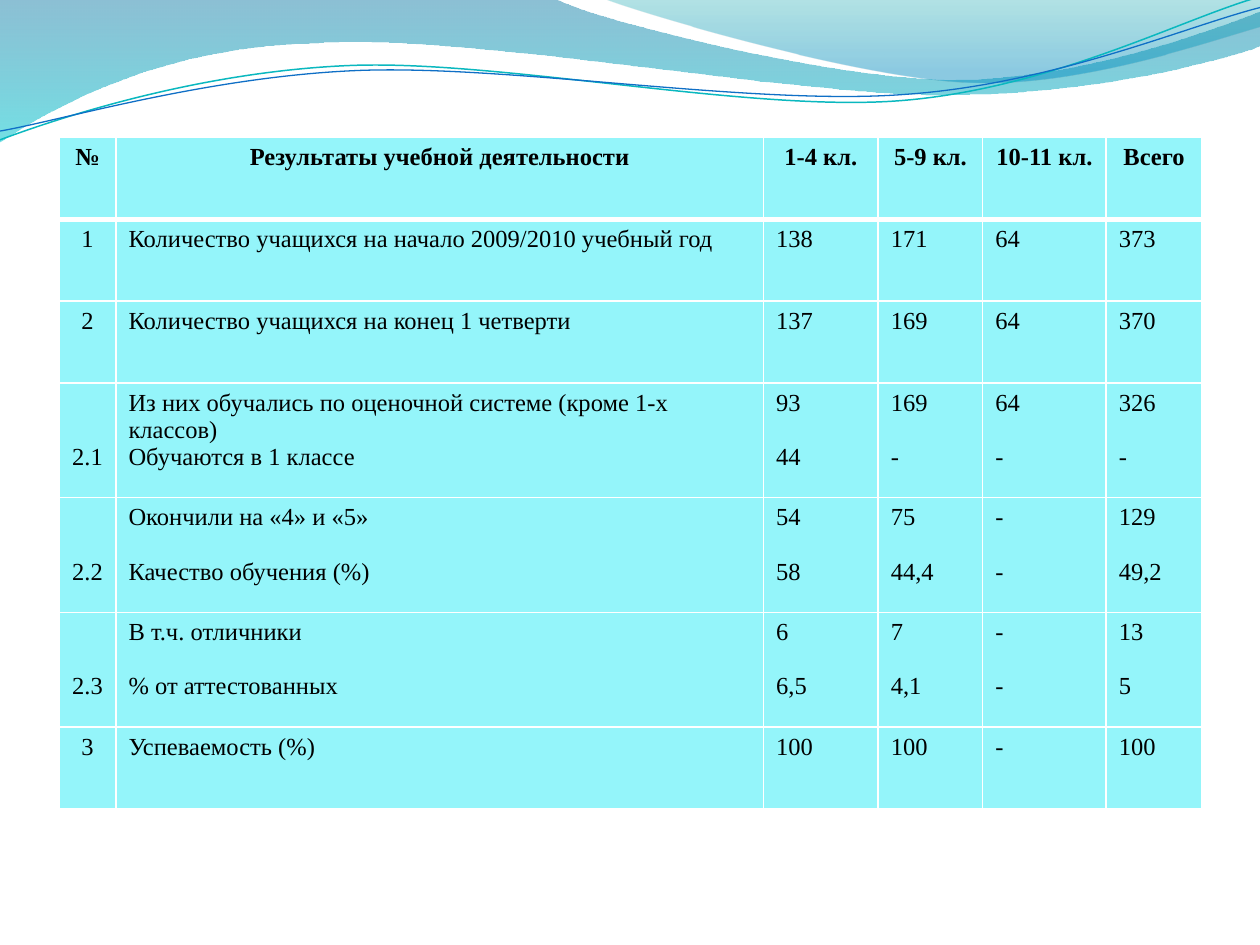
import math
from typing import NamedTuple

from lxml import etree
from pptx import Presentation
from pptx.dml.color import RGBColor
from pptx.enum.text import PP_ALIGN
from pptx.oxml.ns import qn
from pptx.util import Inches, Pt

CENTER, LEFT = PP_ALIGN.CENTER, PP_ALIGN.LEFT
BLACK = RGBColor(0x00, 0x00, 0x00)
WHITE = RGBColor(0xFF, 0xFF, 0xFF)
CELL_FILL = RGBColor(0x94, 0xF5, 0xFA)
DEEP_BLUE = RGBColor(0x00, 0x74, 0xA1)
CYAN = RGBColor(0x00, 0xC6, 0xCF)
TEAL = RGBColor(0x00, 0xA1, 0xA9)
SKY = RGBColor(0x00, 0x8B, 0xBF)
LINE_TEAL = RGBColor(0x0A, 0xB8, 0xBF)
LINE_BLUE = RGBColor(0x0F, 0x6F, 0xC6)
FONT = "Times New Roman"
FONT_SIZE = Pt(14)
BLANK_LINE = Pt(15.5)
WAVE_TILT = -2.7
WAVE_CENTER = (4.99, 0.58)


class Stop(NamedTuple):
    position: float
    color: RGBColor
    opacity: int


class Band(NamedTuple):
    """Filled shape: a segment of 1 point is a line, of 3 a Bezier curve."""
    start: tuple
    segments: list
    stops: tuple


class Wave(NamedTuple):
    start: tuple
    segments: list
    color: RGBColor
    width: float


class Row(NamedTuple):
    height: float
    cells: tuple
    label_gap: bool = True


BANDS = [
    Band((0, 0), [
        [(4.4, -0.01)],
        [(4.76, 0.17), (6.64, 0.63), (7.58, 0.63)],
        [(8.53, 0.63), (9.58, 0.26), (10, 0.09)],
        [(10.01, 0.36)],
        [(9.83, 0.44), (8.7, 0.76), (7.46, 0.75)],
        [(6.22, 0.75), (3.82, 0.28), (2.57, 0.34)],
        [(1.29, 0.36), (0.46, 0.83), (-0.01, 1.13)],
    ], (Stop(0, DEEP_BLUE, 45), Stop(1, CYAN, 55))),
    Band((4.79, -0.01), [
        [(5.09, 0.11), (6.82, 0.62), (7.69, 0.65)],
        [(8.56, 0.69), (9.61, 0.32), (10, 0.21)],
        [(10, 0)],
    ], (Stop(0, TEAL, 30), Stop(0.8, SKY, 45))),
]
WAVES = [
    Wave((0, 1.11), [
        [(0.48, 0.93), (1.58, 0.57), (2.77, 0.52)],
        [(3.95, 0.47), (5.93, 0.89), (7.13, 0.8)],
        [(8.33, 0.71), (9.38, 0.15), (9.98, -0.02)],
    ], LINE_TEAL, 0.85),
    Wave((0, 1.04), [
        [(0.47, 0.96), (1.64, 0.61), (2.83, 0.56)],
        [(4.03, 0.51), (5.97, 0.84), (7.17, 0.75)],
        [(8.36, 0.67), (9.41, 0.21), (10, 0.06)],
    ], LINE_BLUE, 0.75),
]

COL_WIDTHS = [0.45, 5.14, 0.91, 0.83, 0.98, 0.76]
SHORT, TALL = 0.65, 0.91
ROWS = [
    Row(SHORT, ("№", "Результаты учебной деятельности", "1-4 кл.", "5-9 кл.",
                "10-11 кл.", "Всего")),
    Row(SHORT, ("1", "Количество учащихся на начало 2009/2010 учебный год",
                "138", "171", "64", "373")),
    Row(SHORT, ("2", "Количество учащихся на конец 1 четверти",
                "137", "169", "64", "370")),
    Row(TALL, ("2.1", "Из них обучались по оценочной системе (кроме 1-х классов)\n"
               "Обучаются в 1 классе",
               "93\n44", "169\n-", "64\n-", "326\n-"), label_gap=False),
    Row(TALL, ("2.2", "Окончили на «4» и «5»\nКачество обучения (%)",
               "54\n58", "75\n44,4", "-\n-", "129\n49,2")),
    Row(TALL, ("2.3", "В т.ч. отличники\n% от аттестованных",
               "6\n6,5", "7\n4,1", "-\n-", "13\n5")),
    Row(SHORT, ("3", "Успеваемость (%)", "100", "100", "-", "100")),
]


def add_outline(slide, start: tuple, segments: list, close: bool):
    """Build the outline through all points, then bend 3-point segments."""
    x, y = start
    builder = slide.shapes.build_freeform(Inches(x), Inches(y))
    builder.add_line_segments(
        [(Inches(x), Inches(y)) for seg in segments for x, y in seg], close=close)
    sp = builder.convert_to_shape()
    sp.shadow.inherit = False
    lines = iter(list(sp._element.iter(qn("a:lnTo"))))
    for seg in segments:
        parts = [next(lines) for _ in seg]
        if len(parts) == 3:
            parts[0].addprevious(curve := etree.Element(qn("a:cubicBezTo")))
            for part in parts:
                curve.append(part[0])
                part.getparent().remove(part)
    return sp


def add_band(slide, band: Band) -> None:
    sp = add_outline(slide, band.start, band.segments, True)
    sp.line.fill.background()
    sp.fill.gradient()
    sp.fill.gradient_angle = 270
    for target, stop in zip(sp.fill.gradient_stops, band.stops):
        target.position = stop.position
        target.color.rgb = stop.color
    colors = sp._element.spPr.find(qn("a:gradFill")).iter(qn("a:srgbClr"))
    for clr, stop in zip(colors, band.stops):
        etree.SubElement(clr, qn("a:alpha"), val=str(stop.opacity * 1000))


def level(point: tuple) -> tuple:
    """Place of a wave point before the wave is tilted."""
    cx, cy = WAVE_CENTER
    dx, dy = point[0] - cx, point[1] - cy
    cos, sin = math.cos(math.radians(-WAVE_TILT)), math.sin(math.radians(-WAVE_TILT))
    return cx + dx * cos - dy * sin, cy + dx * sin + dy * cos


def add_wave(slide, wave: Wave) -> None:
    segments = [[level(point) for point in seg] for seg in wave.segments]
    sp = add_outline(slide, level(wave.start), segments, False)
    sp.rotation = WAVE_TILT
    sp.fill.background()
    sp.line.color.rgb = wave.color
    sp.line.width = Pt(wave.width)


def set_borders(cell, top: float, bottom: float) -> None:
    tc_pr = cell._tc.get_or_add_tcPr()
    for side, width in (("L", 1), ("R", 1), ("T", top), ("B", bottom)):
        ln = etree.SubElement(tc_pr, qn(f"a:ln{side}"), w=str(Pt(width)))
        fill = etree.SubElement(ln, qn("a:solidFill"))
        etree.SubElement(fill, qn("a:srgbClr"), val=str(WHITE))


def fill_cell(cell, text: str, gap: bool, bold: bool, centered: bool) -> None:
    cell.fill.solid()
    cell.fill.fore_color.rgb = CELL_FILL
    tf = cell.text_frame
    tf.text = text
    for i, p in enumerate(tf.paragraphs):
        p.alignment = CENTER if centered else LEFT
        if i and gap:
            p.space_before = BLANK_LINE
        for r in p.runs:
            r.font.name = FONT
            r.font.size = FONT_SIZE
            r.font.bold = bold
            r.font.color.rgb = BLACK


def add_results_table(slide, rows: list) -> None:
    table = slide.shapes.add_table(
        len(rows), len(COL_WIDTHS), Inches(0.47), Inches(1.09),
        Inches(sum(COL_WIDTHS)), Inches(sum(row.height for row in rows))).table
    table.horz_banding = False
    for column, width in zip(table.columns, COL_WIDTHS):
        column.width = Inches(width)
    for i, row in enumerate(rows):
        table.rows[i].height = Inches(row.height)
        for j, text in enumerate(row.cells):
            cell = table.cell(i, j)
            set_borders(cell, 3 if i == 1 else 1, 3 if i == 0 else 1)
            fill_cell(cell, text, row.label_gap or j != 1, i == 0, i == 0 or j == 0)
        if row.height == TALL:  # number stands on the third line
            table.cell(i, 0).margin_top = Inches(0.05) + 2 * BLANK_LINE


def main() -> None:
    prs = Presentation()
    prs.slide_width, prs.slide_height = Inches(10), Inches(7.5)
    slide = prs.slides.add_slide(prs.slide_layouts[6])
    # Decorative waves along the top
    for band in BANDS:
        add_band(slide, band)
    for wave in WAVES:
        add_wave(slide, wave)
    # Results by school level
    add_results_table(slide, ROWS)
    prs.save("out.pptx")


if __name__ == "__main__":
    main()
